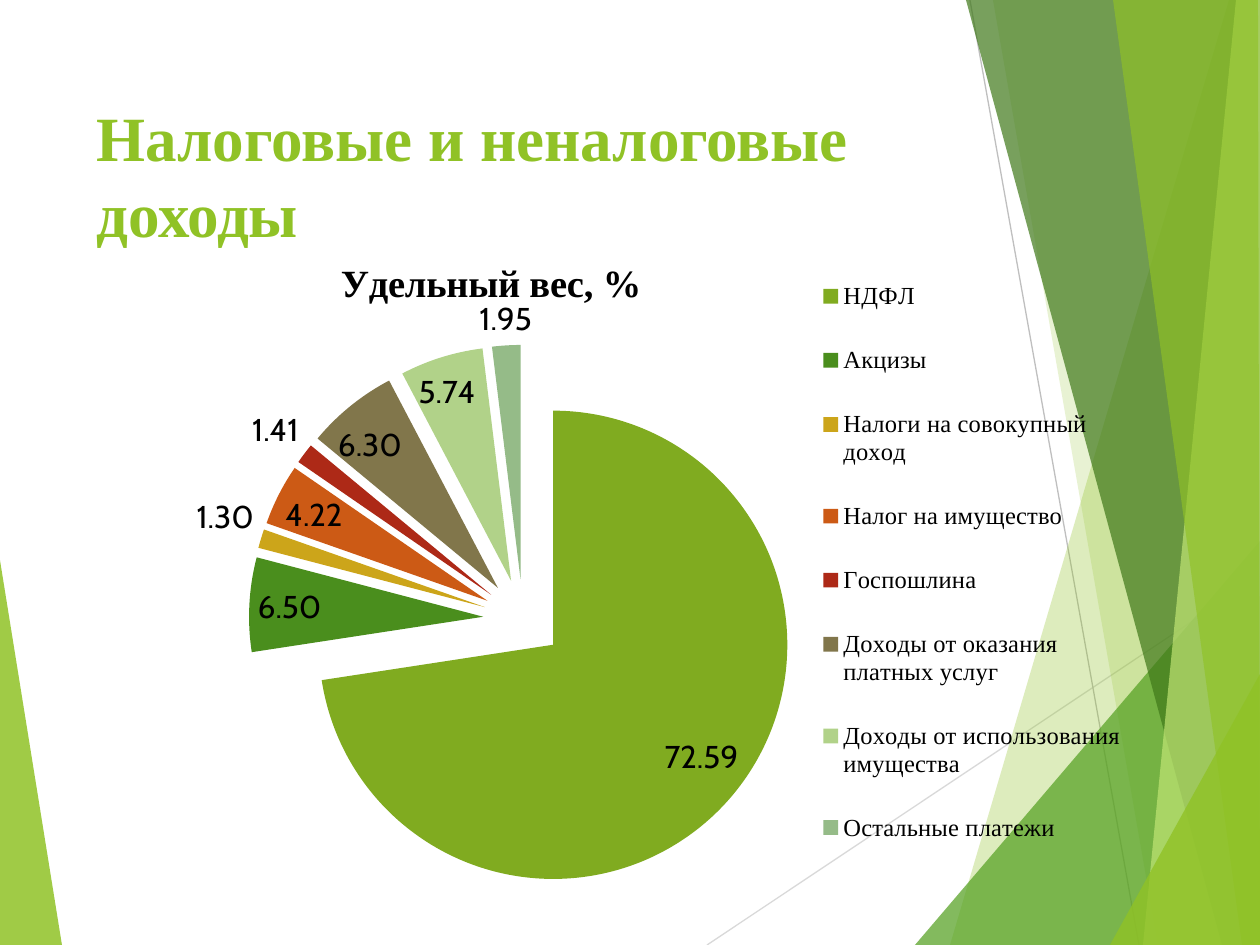
import pptx
import pptx.chart.data
import pptx.dml.color
import pptx.enum.chart
import pptx.enum.shapes
import pptx.enum.text
import pptx.oxml
import pptx.oxml.ns
import pptx.util
import lxml.etree

PX = 914400 / 126
WIDE, HIGH = 1260, 945
SERIF, SANS = "Times New Roman", "Cabin"
HEX = {
    "lime": "90C226", "green": "54A021", "dark": "3F7819", "pale": "C0E474",
    "rule": "D9D9D9", "edge": "BFBFBF", "text": "000000",
}
# Each share: name, value, slice colour
SHARES = [
    ("НДФЛ", 72.59, "80AB20"),
    ("Акцизы", 6.5, "4A8E1D"),
    ("Налоги на совокупный доход", 1.3, "CCA51A"),
    ("Налог на имущество", 4.22, "CC5A15"),
    ("Госпошлина", 1.41, "AD2917"),
    ("Доходы от оказания платных услуг ", 6.3, "81764B"),
    ("Доходы от использования имущества ", 5.74, "B1D289"),
    ("Остальные платежи", 1.95, "95BB88"),
]
# Each facet: colour, opacity in percent, corners
FACETS = [
    ("lime", 30, [(1229, 0), (950, 945), (1260, 945), (1260, 0)]),
    ("lime", 20, [(993, 0), (1158, 945), (1260, 945), (1260, 0)]),
    ("green", 72, [(915, 945), (1260, 541), (1260, 945)]),
    ("dark", 70, [(966, 0), (1222, 945), (1260, 945), (1260, 0)]),
    ("pale", 70, [(1236, 0), (1143, 945), (1260, 945), (1260, 0)]),
    ("lime", 65, [(1113, 0), (1242, 945), (1260, 945), (1258, 0)]),
    ("lime", 80, [(1110, 945), (1260, 674), (1260, 945)]),
]


def emu(px):
    return pptx.util.Emu(round(px * PX))


def rgb(code):
    return pptx.dml.color.RGBColor.from_string(code)


def style(font, size, face, color, bold=False):
    font.size = pptx.util.Pt(size)
    font.name = face
    font.bold = bold
    font.color.rgb = rgb(color)


def facet(slide, box, color, alpha, spots):
    left, top = box[:2]
    spots = [(left + x, top + y) for x, y in spots]
    pen = slide.shapes.build_freeform(*spots[0], scale=PX)
    pen.add_line_segments(spots[1:], close=True)
    shape = pen.convert_to_shape()
    shape.shadow.inherit = False
    shape.line.fill.background()
    shape.fill.solid()
    shape.fill.fore_color.rgb = rgb(HEX[color])
    tint = shape._element.spPr.find(".//" + pptx.oxml.ns.qn("a:srgbClr"))
    lxml.etree.SubElement(tint, pptx.oxml.ns.qn("a:alpha"), val=str(alpha * 1000))


def rule(slide, box, start, end, color):
    left, top = box[:2]
    line = slide.shapes.add_connector(
        pptx.enum.shapes.MSO_CONNECTOR.STRAIGHT,
        emu(left + start[0]), emu(top + start[1]),
        emu(left + end[0]), emu(top + end[1]))
    line.line.color.rgb = rgb(HEX[color])
    line.line.width = pptx.util.Pt(0.75)
    lxml.etree.SubElement(line._element.spPr, pptx.oxml.ns.qn("a:effectLst"))


def decor(slide, box):
    facet(slide, box, "lime", 85, [(0, 560), (62, 945), (0, 945)])
    rule(slide, box, (707, 945), (1260, 576), "rule")
    rule(slide, box, (970, 0), (1139, 945), "edge")
    for color, alpha, spots in FACETS:
        facet(slide, box, color, alpha, spots)


def heading(slide, box):
    title = slide.shapes.title
    title.left, title.top, title.width, title.height = map(emu, box)
    # Keep the heading above the backdrop
    slide.shapes._spTree.append(title._element)
    frame = title.text_frame
    frame.text = "Налоговые и неналоговые доходы"
    frame.word_wrap = True
    frame.vertical_anchor = pptx.enum.text.MSO_ANCHOR.MIDDLE
    para = frame.paragraphs[0]
    para.alignment = pptx.enum.text.PP_ALIGN.LEFT
    style(para.font, 36, SERIF, HEX["lime"], True)


def layout(part, box, spot, inner=False):
    """Place a chart part at spot (x, y and maybe w, h) in the chart's box."""
    tags = '<c:layoutTarget val="inner"/>' if inner else ""
    tags += '<c:xMode val="edge"/><c:yMode val="edge"/>'
    for name, value, full in zip("xywh", spot, box[2:] * 2):
        tags += f'<c:{name} val="{value / full:.4f}"/>'
    node = pptx.oxml.parse_xml(
        f'<c:layout {pptx.oxml.ns.nsdecls("c")}>'
        f'<c:manualLayout>{tags}</c:manualLayout></c:layout>')
    for old in part.findall(pptx.oxml.ns.qn("c:layout")):
        part.remove(old)
    # Layout follows the text of a title or the position of a legend
    heads = [pptx.oxml.ns.qn(tag) for tag in ("c:tx", "c:legendPos")]
    part.insert(sum(child.tag in heads for child in part), node)


def shares(slide, box):
    data = pptx.chart.data.CategoryChartData(number_format="0.00")
    data.categories = [name for name, _, _ in SHARES]
    data.add_series("Удельный вес, %", [value for _, value, _ in SHARES])
    chart = slide.shapes.add_chart(
        pptx.enum.chart.XL_CHART_TYPE.PIE, *map(emu, box), data).chart
    style(chart.font, 18, SANS, HEX["text"])

    # Title
    chart.has_title = True
    frame = chart.chart_title.text_frame
    frame.text = "Удельный вес, %"
    style(frame.paragraphs[0].font, 22, SERIF, HEX["text"], True)
    layout(chart.chart_title._element, box, (250, 48))

    # Legend
    chart.has_legend = True
    legend = chart.legend
    legend.position = pptx.enum.chart.XL_LEGEND_POSITION.RIGHT
    legend.include_in_layout = False
    style(legend.font, 14, SERIF, HEX["text"])
    layout(legend._element, box, (730, 42, 316, 632))

    # Slices
    plot = chart.plots[0]
    plot.vary_by_categories = True
    series = plot.series[0]
    for index, (_, _, color) in enumerate(SHARES):
        fill = series.points[index].format.fill
        fill.solid()
        fill.fore_color.rgb = rgb(color)
    burst = pptx.oxml.parse_xml(
        f'<c:explosion {pptx.oxml.ns.nsdecls("c")} val="17"/>')
    series._element.find(pptx.oxml.ns.qn("c:dPt")).addprevious(burst)
    for point in series._element.findall(pptx.oxml.ns.qn("c:dPt")):
        point.find(pptx.oxml.ns.qn("c:spPr")).addprevious(
            pptx.oxml.parse_xml(
                f'<c:explosion {pptx.oxml.ns.nsdecls("c")} val="17"/>'))
    area = chart._chartSpace.chart.plotArea
    layout(area, box, (165, 141, 548, 548), inner=True)

    # Labels
    plot.has_data_labels = True
    labels = plot.data_labels
    labels.show_value = True
    labels.show_percentage = False
    labels.number_format = "0.00"
    labels.number_format_is_linked = False
    labels.position = pptx.enum.chart.XL_LABEL_POSITION.BEST_FIT
    style(labels.font, 18, SANS, HEX["text"])


def main():
    deck = pptx.Presentation()
    deck.slide_width, deck.slide_height = emu(WIDE), emu(HIGH)
    slide = deck.slides.add_slide(deck.slide_layouts[5])
    decor(slide, (0, 0, WIDE, HIGH))
    heading(slide, (84, 84, 942, 181))
    shares(slide, (84, 204, 1132, 704))
    deck.save("out.pptx")


if __name__ == "__main__":
    main()
